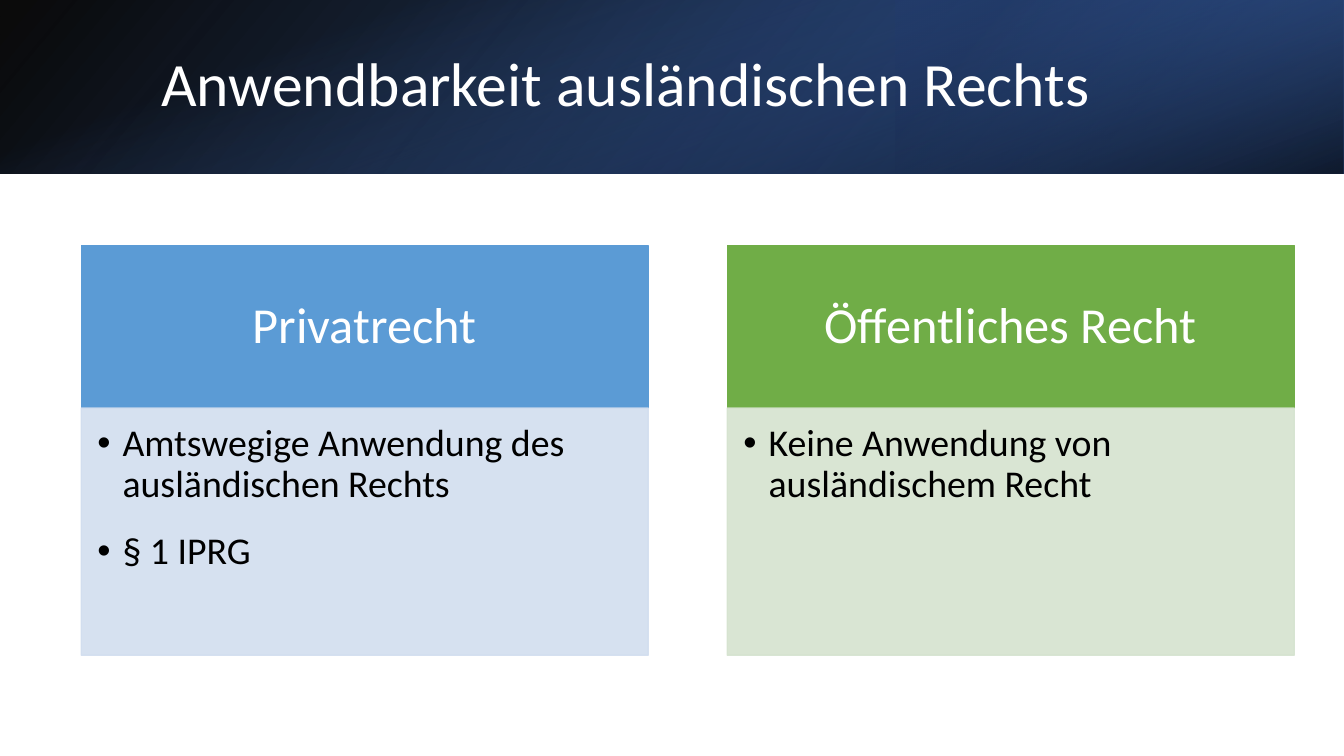
from dataclasses import dataclass

from lxml import etree
from pptx import Presentation
from pptx.dml.color import RGBColor
from pptx.enum.shapes import MSO_SHAPE
from pptx.enum.text import MSO_ANCHOR, MSO_AUTO_SIZE, PP_ALIGN
from pptx.oxml.ns import qn
from pptx.util import Pt

RECTANGLE = MSO_SHAPE.RECTANGLE
TOP, MIDDLE = MSO_ANCHOR.TOP, MSO_ANCHOR.MIDDLE
LEFT, CENTER = PP_ALIGN.LEFT, PP_ALIGN.CENTER
NO_AUTOFIT = MSO_AUTO_SIZE.NONE
COMPARISON_LAYOUT = 4
BEHIND_PLACEHOLDERS = 2


@dataclass(frozen=True)
class Theme:
    font: str = "Calibri"
    title_size: int = 44
    heading_size: int = 36
    list_size: int = 27
    light_text: str = "FFFFFF"
    dark_text: str = "000000"
    black: str = "000000"
    navy: str = "203864"
    deep_blue: str = "2F5597"
    bright_blue: str = "4472C4"
    private_law: tuple = ("5B9BD5", "D2DEEF")
    public_law: tuple = ("70AD47", "D5E3CF")
    panel_opacity: int = 90


class SlideBuilder:
    def __init__(self, slide, theme):
        self.slide = slide
        self.theme = theme

    def set_opacity(self, shape, opacities):
        for color, opacity in zip(shape.element.iter(qn("a:srgbClr")), opacities):
            etree.SubElement(color, qn("a:alpha"), val=str(opacity * 1000))

    def gradient_layer(self, depth, box, angle, stops):
        shape = self.slide.shapes.add_shape(RECTANGLE, *map(Pt, box))
        shape.shadow.inherit = False
        shape.line.fill.background()
        shape.fill.gradient()
        shape.fill.gradient_angle = angle
        for stop, (position, color, _) in zip(shape.fill.gradient_stops, stops):
            stop.position = position
            stop.color.rgb = RGBColor.from_string(color)
        self.set_opacity(shape, [opacity for _, _, opacity in stops])
        self.slide.shapes.element.insert(BEHIND_PLACEHOLDERS + depth, shape.element)

    def placeholder(self, index, box, insets, anchor):
        shape = self.slide.placeholders[index]
        shape.left, shape.top, shape.width, shape.height = map(Pt, box)
        frame = shape.text_frame
        frame.word_wrap = True
        frame.auto_size = NO_AUTOFIT
        frame.vertical_anchor = anchor
        frame.margin_left, frame.margin_top, frame.margin_right, frame.margin_bottom = map(Pt, insets)
        return shape

    def fill_panel(self, shape, color, opacity):
        shape.fill.solid()
        shape.fill.fore_color.rgb = RGBColor.from_string(color)
        shape.line.color.rgb = RGBColor.from_string(color)
        shape.line.width = Pt(1)
        self.set_opacity(shape, [opacity, opacity])

    def text_run(self, paragraph, text, size, color, alignment, space_after=0):
        paragraph.alignment = alignment
        paragraph.line_spacing = 0.9
        paragraph.space_before = Pt(0)
        paragraph.space_after = Pt(space_after)
        run = paragraph.add_run()
        run.text = text
        run.font.name = self.theme.font
        run.font.size = Pt(size)
        run.font.bold = False
        run.font.color.rgb = RGBColor.from_string(color)

    def title(self, text, box):
        shape = self.placeholder(0, box, (7.2, 3.6, 7.2, 3.6), MIDDLE)
        self.text_run(shape.text_frame.paragraphs[0], text,
                      self.theme.title_size, self.theme.light_text, LEFT)

    def heading(self, index, text, box, color):
        shape = self.placeholder(index, box, (20, 11.5, 20, 11.5), MIDDLE)
        self.fill_panel(shape, color, 100)
        self.text_run(shape.text_frame.paragraphs[0], text,
                      self.theme.heading_size, self.theme.light_text, CENTER)

    def bullet_list(self, index, items, box, color):
        shape = self.placeholder(index, box, (11.5, 11.5, 15, 17), TOP)
        self.fill_panel(shape, color, self.theme.panel_opacity)
        frame = shape.text_frame
        for number, item in enumerate(items):
            paragraph = frame.add_paragraph() if number else frame.paragraphs[0]
            self.text_run(paragraph, item, self.theme.list_size,
                          self.theme.dark_text, LEFT, space_after=18.5)
            properties = paragraph._p.get_or_add_pPr()
            properties.set("marL", str(Pt(18)))
            properties.set("indent", str(Pt(-18)))
            etree.SubElement(properties, qn("a:buFont"), typeface="Arial")
            etree.SubElement(properties, qn("a:buChar"), char="•")


def main():
    theme = Theme()
    presentation = Presentation()
    presentation.slide_width, presentation.slide_height = Pt(960), Pt(540)
    slide = presentation.slides.add_slide(presentation.slide_layouts[COMPARISON_LAYOUT])
    builder = SlideBuilder(slide, theme)

    banner = (0, 0, 960, 124)
    banner_layers = [
        (banner, 320, [(0, theme.black, 96), (1, theme.deep_blue, 100)]),
        ((640, 0, 320, 124), 320, [(0.19, theme.navy, 68), (1, theme.bright_blue, 79)]),
        (banner, 290, [(0.23, theme.bright_blue, 0), (0.99, theme.black, 74)]),
    ]
    for depth, (box, angle, stops) in enumerate(banner_layers):
        builder.gradient_layer(depth, box, angle, stops)
    builder.title("Anwendbarkeit ausländischen Rechts", (108, 27.4, 790.5, 69))

    left, top, width, stride = 58, 175.5, 405, 461.5
    heading_height, list_height = 116, 176.5
    columns = [
        ("Privatrecht", ["Amtswegige Anwendung des ausländischen Rechts", "§ 1 IPRG"],
         theme.private_law),
        ("Öffentliches Recht", ["Keine Anwendung von ausländischem Recht"],
         theme.public_law),
    ]
    for column, (heading, items, (strong, pale)) in enumerate(columns):
        x = left + column * stride
        builder.heading(1 + 2 * column, heading, (x, top, width, heading_height), strong)
        builder.bullet_list(2 + 2 * column, items,
                            (x, top + heading_height, width, list_height), pale)

    presentation.save("out.pptx")


if __name__ == "__main__":
    main()
